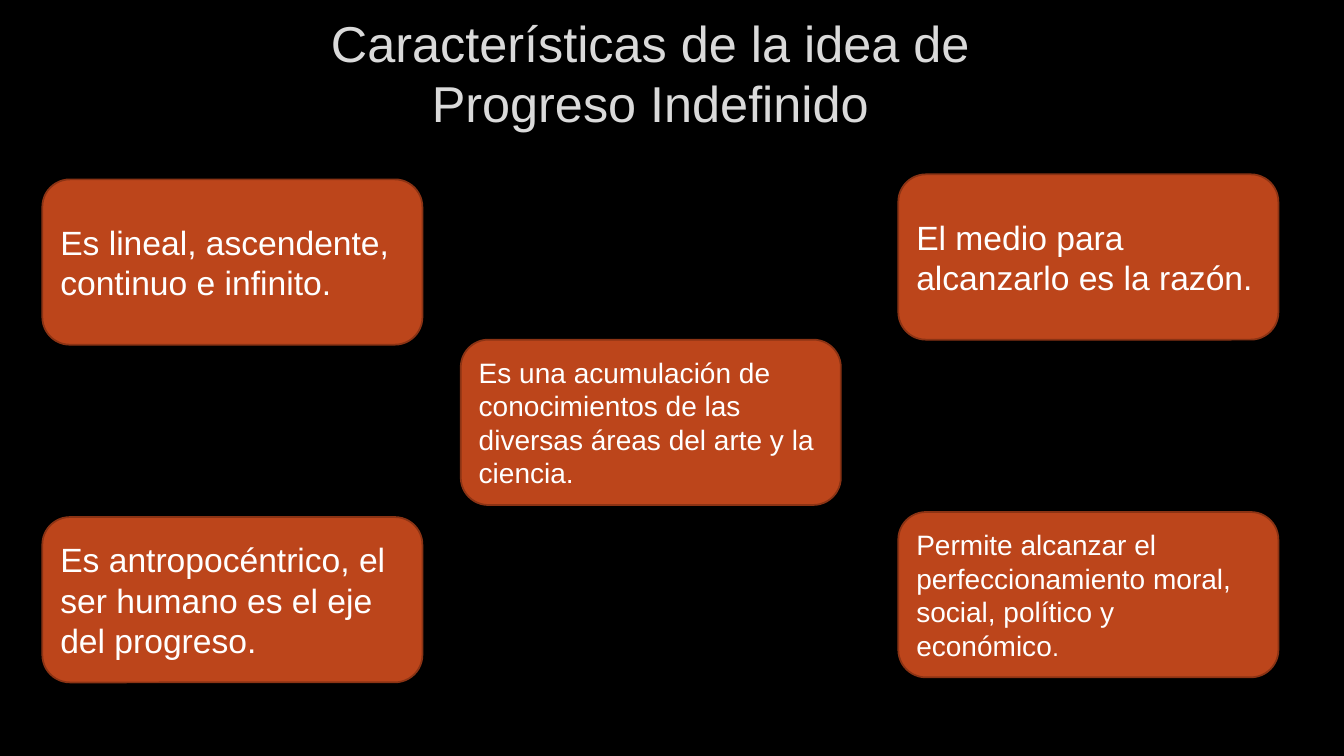
import pptx
import pptx.dml.color
import pptx.enum.shapes
import pptx.enum.text
import pptx.util

Inches = pptx.util.Inches
ALIGN = pptx.enum.text.PP_ALIGN

COLORS = {
    "background": "000000",
    "title": "DADADA",
    "card": "BC451B",
    "card_edge": "8B3314",
    "card_text": "FFFFFF",
}


def rgb(name):
    return pptx.dml.color.RGBColor.from_string(COLORS[name])


def write(frame, text, size=24, color="card_text", align=ALIGN.LEFT):
    """Append text to the frame's first paragraph; a newline becomes a line break."""
    frame.word_wrap = True
    frame.vertical_anchor = pptx.enum.text.MSO_ANCHOR.MIDDLE
    paragraph = frame.paragraphs[0]
    paragraph.alignment = align
    for number, line in enumerate(text.split("\n")):
        if number:
            paragraph.add_line_break()
        run = paragraph.add_run()
        run.text = line
        run.font.name = "Arial"
        run.font.size = pptx.util.Pt(size)
        run.font.color.rgb = rgb(color)


deck = pptx.Presentation()
deck.slide_width = Inches(13.33)
deck.slide_height = Inches(7.5)
slide = deck.slides.add_slide(deck.slide_layouts[6])
slide.background.fill.solid()
slide.background.fill.fore_color.rgb = rgb("background")

title = slide.shapes.add_textbox(Inches(0.79), Inches(0.19), Inches(11.32), Inches(1.06))
write(title.text_frame, "Características de la idea de\nProgreso Indefinido",
      size=36, color="title", align=ALIGN.CENTER)

# Each feature: left, top, and its text pieces with their sizes
LEFT, MIDDLE, RIGHT = 0.42, 4.57, 8.91
features = [
    (LEFT, 1.78, [("Es lineal, ascendente, continuo e infinito.", 24)]),
    (RIGHT, 1.73, [("El medio para alcanzarlo es la razón.", 24)]),
    (RIGHT, 5.08, [("Permite alcanzar el perfeccionamiento moral, social, político y económico", 20),
                   (".", 18)]),
    (MIDDLE, 3.37, [("Es una acumulación de conocimientos de las diversas áreas del arte y la ciencia.", 20)]),
    (LEFT, 5.13, [("Es antropocéntrico, el ser humano es el eje del progreso.", 24)]),
]
for left, top, pieces in features:
    card = slide.shapes.add_shape(pptx.enum.shapes.MSO_SHAPE.ROUNDED_RECTANGLE,
                                  Inches(left), Inches(top), Inches(3.77), Inches(1.64))
    card.shadow.inherit = False
    card.fill.solid()
    card.fill.fore_color.rgb = rgb("card")
    card.line.color.rgb = rgb("card_edge")
    card.line.width = pptx.util.Pt(1.25)
    for text, size in pieces:
        write(card.text_frame, text, size=size)

deck.save("out.pptx")
